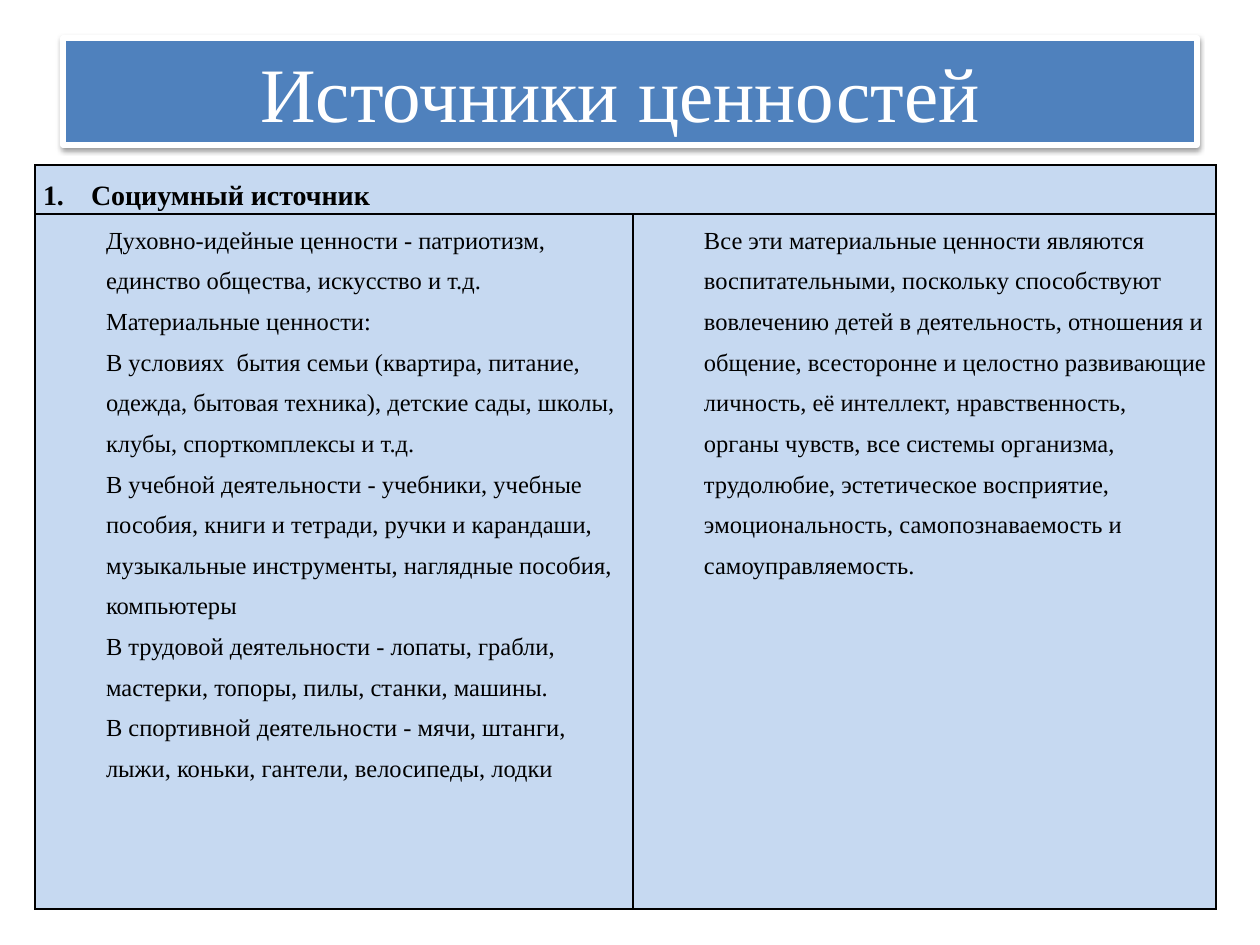
from dataclasses import dataclass

from lxml.etree import SubElement
from pptx import Presentation
from pptx.dml.color import RGBColor
from pptx.enum.shapes import MSO_SHAPE
from pptx.enum.text import MSO_ANCHOR, PP_ALIGN
from pptx.oxml import parse_xml
from pptx.oxml.ns import nsdecls, qn
from pptx.util import Emu, Pt

PX_PER_INCH = 126


@dataclass(frozen=True)
class Theme:
    font: str = "Times New Roman"
    accent: str = "4F81BD"
    light: str = "FFFFFF"
    dark: str = "000000"
    cell: str = "C6D9F1"
    title_size: int = 44
    heading_size: int = 16
    body_size: int = 14


HEADING = "Социумный источник"
VALUES = [
    "Духовно-идейные ценности - патриотизм, единство общества, искусство и т.д.",
    "Материальные ценности:",
    "В условиях  бытия семьи (квартира, питание, одежда, бытовая техника), "
    "детские сады, школы, клубы, спорткомплексы и т.д.",
    "В учебной деятельности - учебники, учебные пособия, книги и тетради, ручки и карандаши, "
    "музыкальные инструменты, наглядные пособия, компьютеры",
    "В трудовой деятельности - лопаты, грабли, мастерки, топоры, пилы, станки, машины.",
    "В спортивной деятельности - мячи, штанги, лыжи, коньки, гантели, велосипеды, лодки",
]
CONCLUSION = [
    "Все эти материальные ценности являются воспитательными, поскольку способствуют "
    "вовлечению детей в деятельность, отношения и общение, всесторонне и целостно развивающие "
    "личность, её интеллект, нравственность, органы чувств, все системы организма, трудолюбие, "
    "эстетическое восприятие, эмоциональность, самопознаваемость и самоуправляемость.",
]


def px(length):
    return Emu(round(length * 914400 / PX_PER_INCH))


class SlideBuilder:
    """Draws styled elements on the current slide."""

    def __init__(self, slide, theme):
        self.slide = slide
        self.theme = theme

    def add_run(self, paragraph, text, size, color, bold=False):
        run = paragraph.add_run()
        run.text = text
        run.font.name = self.theme.font
        run.font.size = Pt(size)
        run.font.bold = bold
        run.font.color.rgb = RGBColor.from_string(color)

    def add_title(self, text, left, top, width, height):
        shape = self.slide.shapes.add_shape(
            MSO_SHAPE.RECTANGLE, px(left), px(top), px(width), px(height))
        shape.fill.solid()
        shape.fill.fore_color.rgb = RGBColor.from_string(self.theme.accent)
        shape.line.color.rgb = RGBColor.from_string(self.theme.light)
        shape.line.width = Pt(3)
        shape.shadow.inherit = False
        effects = shape.element.spPr.find(qn("a:effectLst"))
        effects.append(parse_xml(
            f'<a:outerShdw {nsdecls("a")} blurRad="{Pt(3.1)}" dist="{Pt(1.6)}" '
            f'dir="5400000" rotWithShape="0"><a:srgbClr val="{self.theme.dark}">'
            '<a:alpha val="38000"/></a:srgbClr></a:outerShdw>'))
        frame = shape.text_frame
        frame.word_wrap = True
        frame.vertical_anchor = MSO_ANCHOR.MIDDLE
        paragraph = frame.paragraphs[0]
        paragraph.alignment = PP_ALIGN.CENTER
        self.add_run(paragraph, text, self.theme.title_size, self.theme.light)

    def add_table(self, left, top, widths, heights):
        frame = self.slide.shapes.add_table(
            len(heights), len(widths), px(left), px(top), px(sum(widths)), px(sum(heights)))
        table = frame.table
        for column, width in zip(table.columns, widths):
            column.width = px(width)
        for row, height in zip(table.rows, heights):
            row.height = px(height)
        for cell in table.iter_cells():
            self.style_cell(cell)
        return table

    def style_cell(self, cell):
        cell.margin_left = cell.margin_right = px(8)
        cell.margin_top = cell.margin_bottom = 0
        cell.fill.solid()
        cell.fill.fore_color.rgb = RGBColor.from_string(self.theme.cell)
        properties = cell._tc.get_or_add_tcPr()
        for index, side in enumerate(("lnL", "lnR", "lnT", "lnB")):
            properties.insert(index, parse_xml(
                f'<a:{side} {nsdecls("a")} w="{Pt(1)}"><a:solidFill>'
                f'<a:srgbClr val="{self.theme.dark}"/></a:solidFill></a:{side}>'))

    def add_paragraph(self, paragraph, text, size, margin, hanging=0, bold=False):
        paragraph.line_spacing = 1.5
        properties = paragraph._p.get_or_add_pPr()
        properties.set("marL", str(px(margin)))
        properties.set("indent", str(px(-hanging)))
        self.add_run(paragraph, text, size, self.theme.dark, bold)

    def fill_heading(self, cell, text):
        paragraph = cell.text_frame.paragraphs[0]
        paragraph.alignment = PP_ALIGN.JUSTIFY
        self.add_paragraph(paragraph, text, self.theme.heading_size, 48, 48, True)
        SubElement(paragraph._p.get_or_add_pPr(), qn("a:buAutoNum"), type="arabicPeriod")

    def fill_body(self, cell, texts):
        frame = cell.text_frame
        for index, text in enumerate(texts):
            paragraph = frame.add_paragraph() if index else frame.paragraphs[0]
            self.add_paragraph(paragraph, text, self.theme.body_size, 63)


def main():
    presentation = Presentation()
    presentation.slide_width = px(10 * PX_PER_INCH)
    presentation.slide_height = px(7.5 * PX_PER_INCH)
    slide = presentation.slides.add_slide(presentation.slide_layouts[6])
    builder = SlideBuilder(slide, Theme())
    builder.add_title("Источники ценностей ", 63, 38, 1134, 107)
    table = builder.add_table(35, 165, [598, 583], [49, 695])
    table.cell(0, 0).merge(table.cell(0, 1))
    builder.fill_heading(table.cell(0, 0), HEADING)
    builder.fill_body(table.cell(1, 0), VALUES)
    builder.fill_body(table.cell(1, 1), CONCLUSION)
    presentation.save("out.pptx")


if __name__ == "__main__":
    main()
